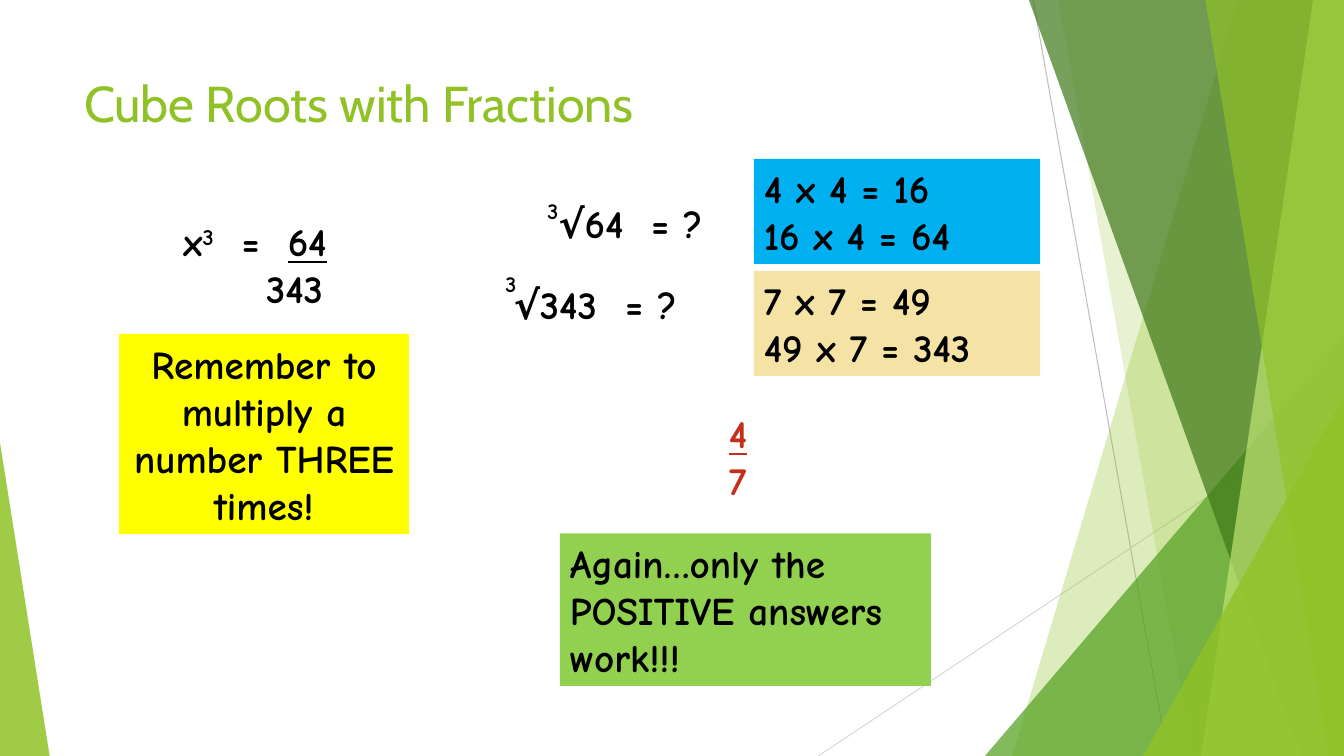
from dataclasses import dataclass

from lxml.etree import SubElement
from pptx import Presentation
from pptx.dml.color import RGBColor
from pptx.enum.shapes import MSO_CONNECTOR, MSO_SHAPE
from pptx.enum.text import PP_ALIGN
from pptx.oxml.ns import qn
from pptx.util import Pt

WIDTH, HEIGHT = 960, 540


@dataclass(frozen=True)
class Theme:
    green: str = "90C226"
    mid_green: str = "54A021"
    dark_green: str = "3F7819"
    pale_green: str = "C0E474"
    line_grey: str = "BFBFBF"
    light_grey: str = "D9D9D9"
    yellow: str = "FFFF00"
    lime: str = "92D050"
    blue: str = "00B0F0"
    sand: str = "F5E3A5"
    red: str = "C42F1A"
    black: str = "000000"
    title_font: str = "Cabin"
    body_font: str = "Comic Neue"
    title_size: int = 36
    body_size: int = 28
    index_size: int = 16


THEME = Theme()


def paint(shape, color, opacity=100):
    """Fill a shape without outline or shadow."""
    shape.shadow.inherit = False
    shape.line.fill.background()
    shape.fill.solid()
    shape.fill.fore_color.rgb = RGBColor.from_string(color)
    if opacity < 100:
        color_node = shape._element.spPr.find(qn("a:solidFill"))[0]
        SubElement(color_node, qn("a:alpha"), val=str(opacity * 1000))


def add_line(page, start, end, color):
    line = page.shapes.add_connector(
        MSO_CONNECTOR.STRAIGHT, *(Pt(value) for value in start + end))
    line.line.color.rgb = RGBColor.from_string(color)
    line.line.width = Pt(0.75)
    SubElement(line._element.spPr, qn("a:effectLst"))


def add_facet(page, top_left, bottom_left, color, opacity):
    """Draw a band reaching from a slanted left side to the slide's edge."""
    builder = page.shapes.build_freeform(Pt(top_left), 0)
    builder.add_line_segments(
        [(Pt(WIDTH), 0), (Pt(WIDTH), Pt(HEIGHT)), (Pt(bottom_left), Pt(HEIGHT))])
    paint(builder.convert_to_shape(), color, opacity)


def add_corner(page, left, top, width, apex, color, opacity):
    """Draw a right-angled triangle standing on the slide's bottom edge."""
    corner = page.shapes.add_shape(MSO_SHAPE.ISOSCELES_TRIANGLE, Pt(left), Pt(top),
                                   Pt(width), Pt(HEIGHT - top))
    corner.adjustments[0] = apex
    paint(corner, color, opacity)


def add_text(page, lines, left, top, width, height, *, fill=None, font=THEME.body_font,
             size=THEME.body_size, color=THEME.black, bold=True,
             align=PP_ALIGN.LEFT, tabs=()):
    """Write lines of text; a line is a string or a list of (text, style) pairs."""
    bounds = [Pt(value) for value in (left, top, width, height)]
    if fill:
        box = page.shapes.add_shape(MSO_SHAPE.RECTANGLE, *bounds)
        paint(box, fill)
    else:
        box = page.shapes.add_textbox(*bounds)
    frame = box.text_frame
    frame.word_wrap = True
    for index, line in enumerate(lines):
        para = frame.add_paragraph() if index else frame.paragraphs[0]
        para.alignment = align
        if tabs:
            tab_list = SubElement(para._p.get_or_add_pPr(), qn("a:tabLst"))
            for stop in tabs:
                SubElement(tab_list, qn("a:tab"), pos=str(Pt(stop)), algn="l")
        for text, style in [(line, "")] if isinstance(line, str) else line:
            span = para.add_run()
            span.text = text
            span.font.name = font
            span.font.size = Pt(size)
            span.font.bold = bold
            span.font.color.rgb = RGBColor.from_string(color)
            if style == "underline":
                span.font.underline = True
            elif style == "superscript":
                span.font._element.set("baseline", "30000")


def add_cube_root(page, number, left, top, index_left, index_top, equals_at):
    add_text(page, [f"√{number}\t= ?"], left, top, 160, 41, tabs=[equals_at])
    add_text(page, ["3"], index_left, index_top, 30, 27, size=THEME.index_size)


def add_backdrop(page):
    add_line(page, (738, 0), (834, HEIGHT), THEME.line_grey)
    add_line(page, (WIDTH, 290), (584.5, HEIGHT), THEME.light_grey)
    add_facet(page, 884, 723, THEME.green, 30)
    add_facet(page, 756, 852, THEME.green, 20)
    add_corner(page, 703.5, 240, 256.5, 1, THEME.mid_green, 72)
    add_facet(page, 735, 929.5, THEME.dark_green, 70)
    add_facet(page, 938, 858, THEME.pale_green, 70)
    add_facet(page, 861, 949, THEME.green, 65)
    add_corner(page, 816.5, 283, 143.5, 1, THEME.green, 80)
    add_corner(page, 0, 316, 35.5, 0, THEME.green, 85)


def main():
    deck = Presentation()
    deck.slide_width, deck.slide_height = Pt(WIDTH), Pt(HEIGHT)
    page = deck.slides.add_slide(deck.slide_layouts[6])
    add_backdrop(page)

    # Title
    add_text(page, ["Cube Roots with Fractions"], 53, 48, 677, 108,
             font=THEME.title_font, size=THEME.title_size, color=THEME.green, bold=False)

    # Equation and reminder
    add_text(page, [[("x", ""), ("3", "superscript"), ("\t=\t", ""),
                     ("\t64\t", "underline")], "\t343"],
             124, 152, 160, 75, tabs=[41.5, 65, 74.5, 122])
    # The denominator sits left of the numerator, on its own tab stop
    page.shapes[-1].text_frame.paragraphs[1]._p.pPr.find(qn("a:tabLst"))[0].set(
        "pos", str(Pt(59)))
    add_text(page, ["Remember to multiply a number THREE times!"], 85, 238.5, 207, 143,
             fill=THEME.yellow, align=PP_ALIGN.CENTER)

    # Cube roots, their checks and the answer
    add_cube_root(page, 64, 392, 139, 384, 137, 66)
    add_cube_root(page, 343, 360, 196.5, 354, 189.5, 79.5)
    add_text(page, ["4 x 4 = 16", "16 x 4 = 64"], 538.5, 113.5, 204.5, 75, fill=THEME.blue)
    add_text(page, ["7 x 7 = 49", "49 x 7 = 343"], 538.5, 193.5, 204.5, 75, fill=THEME.sand)
    add_text(page, [[("\t4", "underline")], "\t7"], 503.5, 289, 58, 75,
             color=THEME.red, tabs=[10])
    add_text(page, ["Again…only the POSITIVE answers work!!!"], 400, 381, 265, 109,
             fill=THEME.lime)

    deck.save("out.pptx")


if __name__ == "__main__":
    main()
